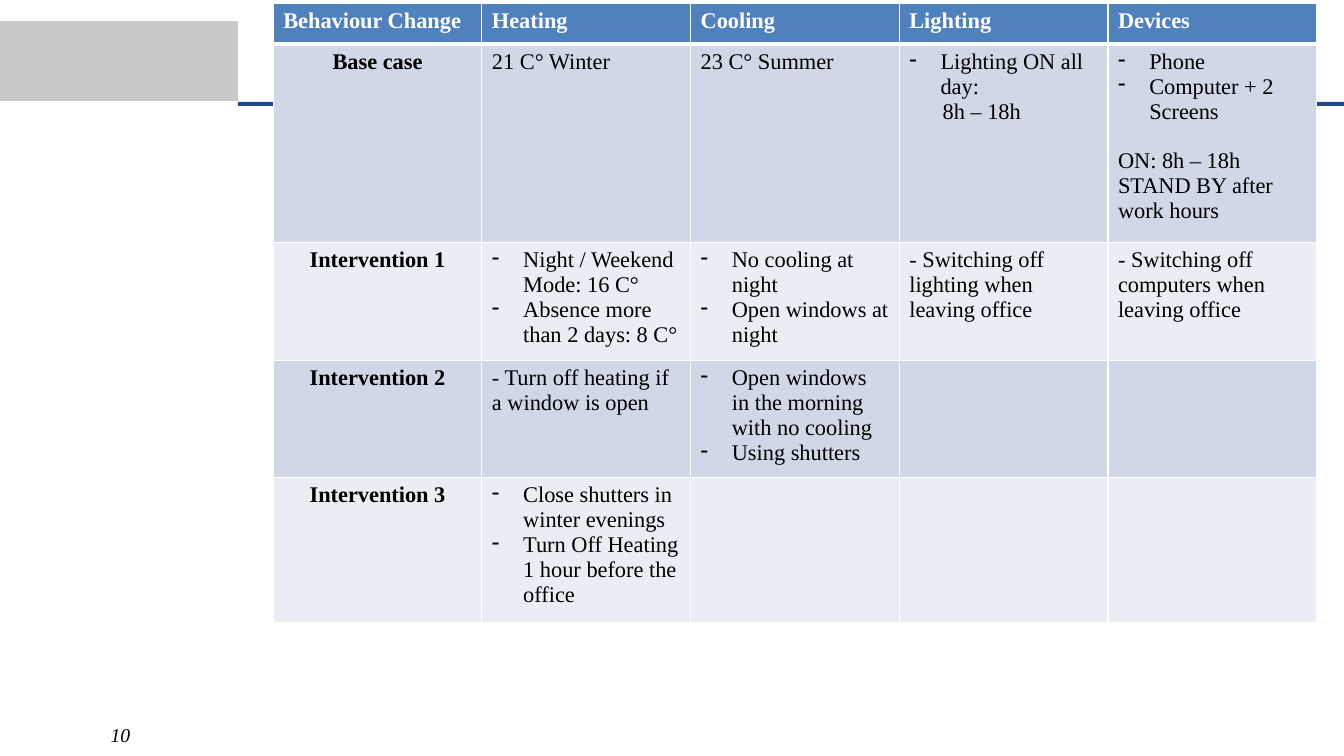
from dataclasses import dataclass
from lxml.etree import SubElement as Sub
from pptx import Presentation
from pptx.dml.color import RGBColor as RGB
from pptx.enum.shapes import MSO_SHAPE as Shape
from pptx.enum.text import MSO_ANCHOR as Anchor, PP_ALIGN as Align
from pptx.oxml.ns import qn
from pptx.util import Inches, Pt


@dataclass(frozen=True)
class Theme:
    font: str = "Times New Roman"
    body: int = 16
    small: int = 14
    black: str = "000000"
    white: str = "FFFFFF"
    navy: str = "1F4A7F"
    head: str = "4F81BD"
    bands: tuple = ("D0D8E8", "E9EDF4")
    thin: int = 1
    thick: int = 3


@dataclass(frozen=True)
class Line:
    text: str
    mark: bool = False
    left: float = 0
    gap: float = 0


def dash(*texts):
    return [Line(text, mark=True, left=0.31) for text in texts]


def plain(text):
    return [Line(text)]


HEADS = ["Behaviour Change", "Heating", "Cooling", "Lighting", "Devices"]
CASES = [
    ("Base case", plain("21 C° Winter"), plain("23 C° Summer"),
     dash("Lighting ON all day:") + [Line("8h – 18h", left=0.33)],
     dash("Phone", "Computer + 2 Screens")
     + [Line("ON: 8h – 18h", gap=17.7), Line("STAND BY after work hours")]),
    ("Intervention 1",
     dash("Night / Weekend Mode: 16 C°", "Absence more than 2 days: 8 C°"),
     dash("No cooling at night", "Open windows at night"),
     plain("- Switching off lighting when leaving office"),
     plain("- Switching off computers when leaving office")),
    ("Intervention 2", plain("- Turn off heating if a window is open"),
     dash("Open windows in the morning with no cooling", "Using shutters"),
     [], []),
    ("Intervention 3",
     dash("Close shutters in winter evenings",
          "Turn Off Heating 1 hour before the office"),
     [], [], []),
]
HEIGHTS = [0.41, 1.97, 1.17, 1.16, 1.44]
WIDTH = 2.07


class Page:
    def __init__(self, deck, theme):
        self.theme = theme
        self.slide = deck.slides.add_slide(deck.slide_layouts[6])

    def rect(self, box, color, alpha=None):
        shape = self.slide.shapes.add_shape(
            Shape.RECTANGLE, *(Inches(side) for side in box))
        shape.shadow.inherit = False
        shape.fill.solid()
        shape.fill.fore_color.rgb = RGB.from_string(color)
        shape.line.fill.background()
        if alpha:
            tint = shape.element.xpath(".//a:srgbClr")[0]
            Sub(tint, qn("a:alpha"), val=str(alpha * 1000))
        return shape

    def text(self, frame, lines, align=Align.LEFT, color=None, **style):
        form = {"name": self.theme.font, "size": Pt(self.theme.body),
                "bold": False, **style}
        for i, line in enumerate(lines):
            para = frame.paragraphs[0] if i == 0 else frame.add_paragraph()
            para.alignment = align
            if line.gap:
                para.space_before = Pt(line.gap)
            if line.left:
                props = para._p.get_or_add_pPr()
                props.set("marL", str(Inches(line.left)))
                props.set("indent", str(-Inches(line.left) * line.mark))
                if line.mark:
                    Sub(props, qn("a:buChar"), char="-")
            run = para.add_run()
            run.text = line.text
            for key, value in form.items():
                setattr(run.font, key, value)
            run.font.color.rgb = RGB.from_string(color or self.theme.black)

    def edge(self, cell, row):
        """Give a cell white borders, thick between the heading and the body."""
        heavy = {0: "B", 1: "T"}.get(row)
        props = cell._tc.get_or_add_tcPr()
        for side in "LRTB":
            size = self.theme.thick if side == heavy else self.theme.thin
            rule = Sub(props, qn("a:ln" + side), w=str(Pt(size)))
            fill = Sub(rule, qn("a:solidFill"))
            Sub(fill, qn("a:srgbClr"), val=self.theme.white)

    def table(self, left, top, heads, cases):
        theme = self.theme
        rows = [[plain(head) for head in heads]]
        rows += [[plain(name), *cells] for name, *cells in cases]
        grid = self.slide.shapes.add_table(
            len(rows), len(heads), Inches(left), Inches(top),
            Inches(WIDTH * len(heads)), Inches(sum(HEIGHTS))).table
        grid.horz_banding = False
        for column in grid.columns:
            column.width = Inches(WIDTH)
        for r, (row, high) in enumerate(zip(rows, HEIGHTS)):
            grid.rows[r].height = Inches(high)
            for c, lines in enumerate(row):
                cell = grid.cell(r, c)
                self.edge(cell, r)
                cell.fill.solid()
                shade = theme.bands[(r - 1) % 2] if r else theme.head
                cell.fill.fore_color.rgb = RGB.from_string(shade)
                self.text(cell.text_frame, lines,
                          align=Align.CENTER if r and c == 0 else Align.LEFT,
                          color=None if r else theme.white,
                          bold=r == 0 or c == 0)

    def number(self, box, text):
        frame = self.rect(box, self.theme.white).text_frame
        frame.word_wrap = True
        frame.vertical_anchor = Anchor.MIDDLE
        self.text(frame, plain(text), align=Align.RIGHT,
                  size=Pt(self.theme.small), italic=True)


def main():
    deck = Presentation()
    deck.slide_width, deck.slide_height = Inches(13.33), Inches(7.5)
    theme = Theme()
    page = Page(deck, theme)
    page.rect((0, 0.21, 2.36, 0.79), theme.black, alpha=21)
    page.rect((2.36, 1.01, 10.97, 0.04), theme.navy)
    page.table(2.71, 0.03, HEADS, CASES)
    page.number((0.5, 7.13, 0.89, 0.32), "10")
    deck.save("out.pptx")


if __name__ == "__main__":
    main()
